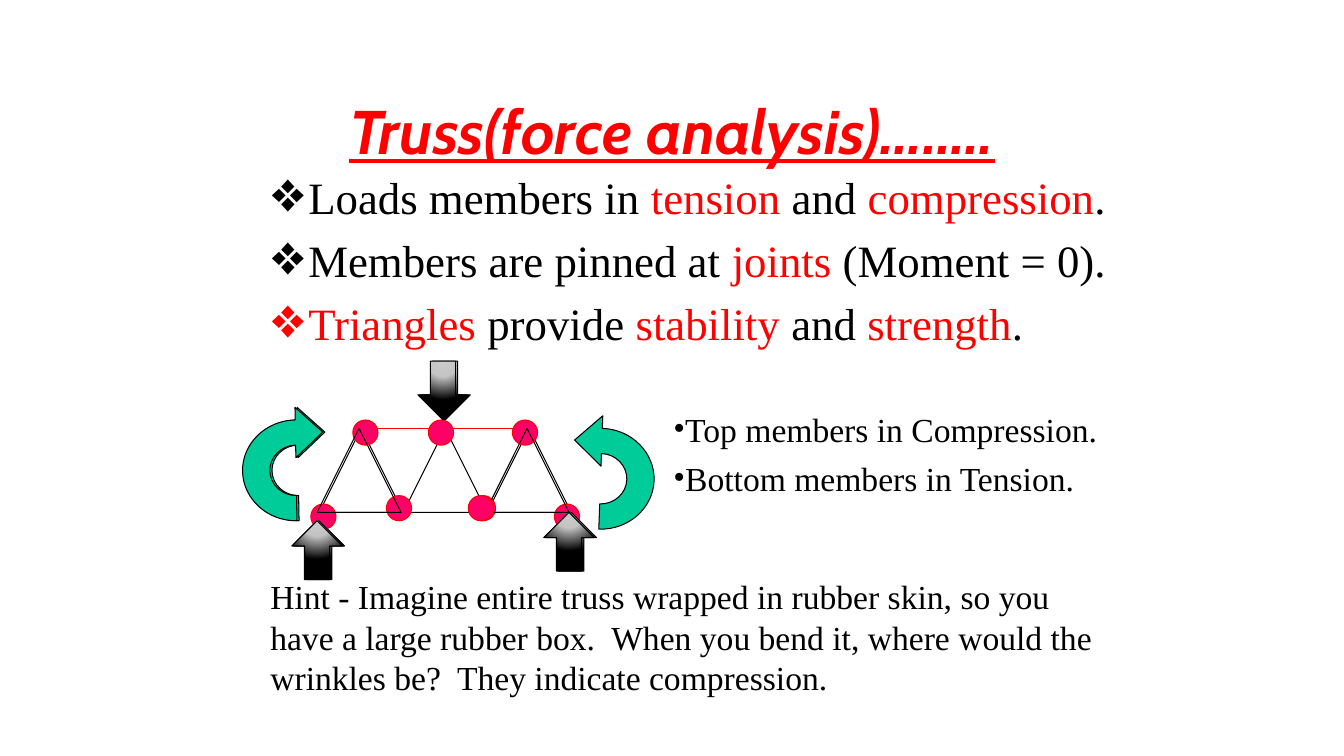
import math
from dataclasses import dataclass

from lxml import etree
from pptx import Presentation, util as u
from pptx.dml.color import RGBColor
from pptx.enum import shapes, text
from pptx.oxml import parse_xml
from pptx.oxml.ns import qn

NS = "http://schemas.openxmlformats.org/drawingml/2006/main"
KIND = shapes.MSO_SHAPE
BEND = 0.55


@dataclass(frozen=True)
class Theme:
    ink: str = "000000"
    red: str = "FF0000"
    joint: str = "FF0066"
    turn: str = "00CC99"
    stops: tuple = ((0, "CCCCCC"), (40, "C4C4C4"), (100, "000000"))
    head: str = "Cabin"
    serif: str = "Times New Roman"
    title: int = 44
    body: int = 32
    note: int = 24
    line: float = 0.75


T = Theme()


def px(n):
    """Turn pixels (96 to the inch) into EMU."""
    return u.Emu(round(n * 9525))


def rgb(code):
    return RGBColor.from_string(code)


def place(shape, x, y, w, h):
    shape.left, shape.top, shape.width, shape.height = map(px, (x, y, w, h))


def style(font, size, face, color):
    font.size, font.name = u.Pt(size), face
    font.color.rgb = rgb(color)


def outline(shape, fill=None, line=T.ink):
    shape.shadow.inherit = False
    if fill:
        shape.fill.solid()
        shape.fill.fore_color.rgb = rgb(fill)
    else:
        shape.fill.background()
    shape.line.color.rgb = rgb(line)
    shape.line.width = u.Pt(T.line)


def bullet(para, mark, indent=0):
    props = para._p.get_or_add_pPr()
    props.set("marL", str(px(indent)))
    props.set("indent", str(px(-indent)))
    etree.SubElement(props, qn("a:buFont")).set("typeface", T.serif)
    etree.SubElement(props, qn("a:buChar")).set("char", mark)


def rich(para, parts, size):
    """Add runs that alternate between ink and red."""
    for i, part in enumerate(parts):
        if part:
            run = para.add_run()
            run.text = part
            style(run.font, size, T.serif, T.red if i % 2 else T.ink)


def title(slide, words):
    shape = slide.shapes.title
    place(shape, 96, 64, 1088, 120)
    frame = shape.text_frame
    frame.text = words
    frame.vertical_anchor = text.MSO_ANCHOR.MIDDLE
    para = frame.paragraphs[0]
    para.alignment = text.PP_ALIGN.CENTER
    font = para.runs[0].font
    style(font, T.title, T.head, T.red)
    font.bold = font.italic = font.underline = True


def write(shape, box, rows, size, gap, mark=None, indent=0, lead=None):
    place(shape, *box)
    frame = shape.text_frame
    frame.word_wrap = True
    frame.auto_size = text.MSO_AUTO_SIZE.NONE
    for i, parts in enumerate(rows):
        para = frame.add_paragraph() if i else frame.paragraphs[0]
        if mark:
            bullet(para, mark, indent)
        para.space_before = u.Pt(gap if i else 0)
        if lead:
            para.line_spacing = lead
        rich(para, parts, size)


def note(slide, *args, **more):
    write(slide.shapes.add_textbox(0, 0, 0, 0), *args, **more)


def truss(slide, x):
    bay = slide.shapes.add_shape(KIND.ISOSCELES_TRIANGLE, px(x), px(408), px(80), px(80))
    outline(bay)


def chord(slide, x1, x2, y):
    bar = slide.shapes.add_connector(
        shapes.MSO_CONNECTOR.STRAIGHT, px(x1), px(y), px(x2), px(y))
    bar.line.color.rgb = rgb(T.red)
    bar.line.width = u.Pt(T.line)
    etree.SubElement(bar._element.spPr, qn("a:effectLst"))


def joint(slide, x, y):
    dot = slide.shapes.add_shape(KIND.OVAL, px(x), px(y), px(24), px(24))
    outline(dot, T.joint, T.red)


def force(slide, x, y, turn=0):
    arrow = slide.shapes.add_shape(KIND.DOWN_ARROW, px(x), px(y), px(48), px(56))
    outline(arrow)
    arrow.rotation = turn
    stops = "".join(f'<a:gs pos="{p * 1000}"><a:srgbClr val="{c}"/></a:gs>'
                    for p, c in T.stops)
    grad = parse_xml(
        f'<a:gradFill xmlns:a="{NS}" rotWithShape="0"><a:gsLst>{stops}</a:gsLst>'
        '<a:path path="circle"><a:fillToRect l="50000" t="-80000" r="50000" '
        'b="180000"/></a:path></a:gradFill>')
    props = arrow._element.spPr
    props.replace(props.find(qn("a:noFill")), grad)


def curve(lines):
    """Merge three line steps into one Bezier step."""
    first = lines[0]
    bend = etree.Element(qn("a:cubicBezTo"))
    first.getparent().replace(first, bend)
    bend.append(first[0])
    for line in lines[1:]:
        bend.append(line[0])
        line.getparent().remove(line)


def moment(slide, cx, cy, side, tilt):
    """Draw a half-ring arrow bulging left (side -1) or right (side 1)."""
    def arc(rx, ry):
        return [(0, -ry), (rx * BEND, -ry), (rx, -ry * BEND), (rx, 0),
                (rx, ry * BEND), (rx * BEND, ry), (0, ry)]

    def spot(x, y):
        a = math.radians(tilt)
        x *= side
        return (px(cx + x * math.cos(a) - y * math.sin(a)),
                px(cy + x * math.sin(a) + y * math.cos(a)))

    head = [(0, -60), (-26, -36), (0, -12)]
    ring = arc(25, 24) + arc(51, 48)[::-1]
    start, *rest = [spot(*p) for p in ring + head]
    form = slide.shapes.build_freeform(*start)
    form.add_line_segments(rest, close=True)
    shape = form.convert_to_shape()
    lines = list(shape._element.iter(qn("a:lnTo")))
    for i in (0, 3, 7, 10):
        curve(lines[i:i + 3])
    outline(shape, T.turn)


def main():
    deck = Presentation()
    deck.slide_width, deck.slide_height = px(1280), px(720)
    slide = deck.slides.add_slide(deck.slide_layouts[1])
    title(slide, "Truss(force analysis)……..")
    write(slide.placeholders[1], (248, 157, 824, 224), [
        ("Loads members in ", "tension ", "and ", "compression", "."),
        ("Members are pinned at ", "joints", " (Moment = 0)."),
        ("", "Triangles", " provide ", "stability", " and ", "strength", "."),
    ], T.body, 6.4, "❖", 36)

    for x in range(304, 465, 80):
        truss(slide, x)
    chord(slide, 344, 504, 408)
    moment(slide, 572, 456, 1, 2)
    moment(slide, 284, 448, -1, -1)
    note(slide, (632, 392, 488, 91), [
        ("Top members in Compression.",), ("Bottom members in Tension.",),
    ], T.note, 12, "•", lead=0.8)
    note(slide, (248, 544, 824, 126), [
        ("Hint - Imagine entire truss wrapped in rubber skin, so you have a large "
         "rubber box.  When you bend it, where would the wrinkles be?  They indicate "
         "compression.",),
    ], T.note, 0)

    loads = [(400, 344, 0), (280, 496, 180), (520, 488, 180)]
    force(slide, *loads[0])
    for x in (296, 528):
        joint(slide, x, 480)
    for load in loads[1:]:
        force(slide, *load)
    for i, x in enumerate((336, 368, 408, 448, 488)):
        joint(slide, x, 472 if i % 2 else 400)

    for x in (302, 462):
        truss(slide, x)
    moment(slide, 282, 448, -1, -1)
    for x, y, turn in loads:
        force(slide, x - 2, y, turn)
    joint(slide, 446, 472)
    deck.save("out.pptx")


if __name__ == "__main__":
    main()
